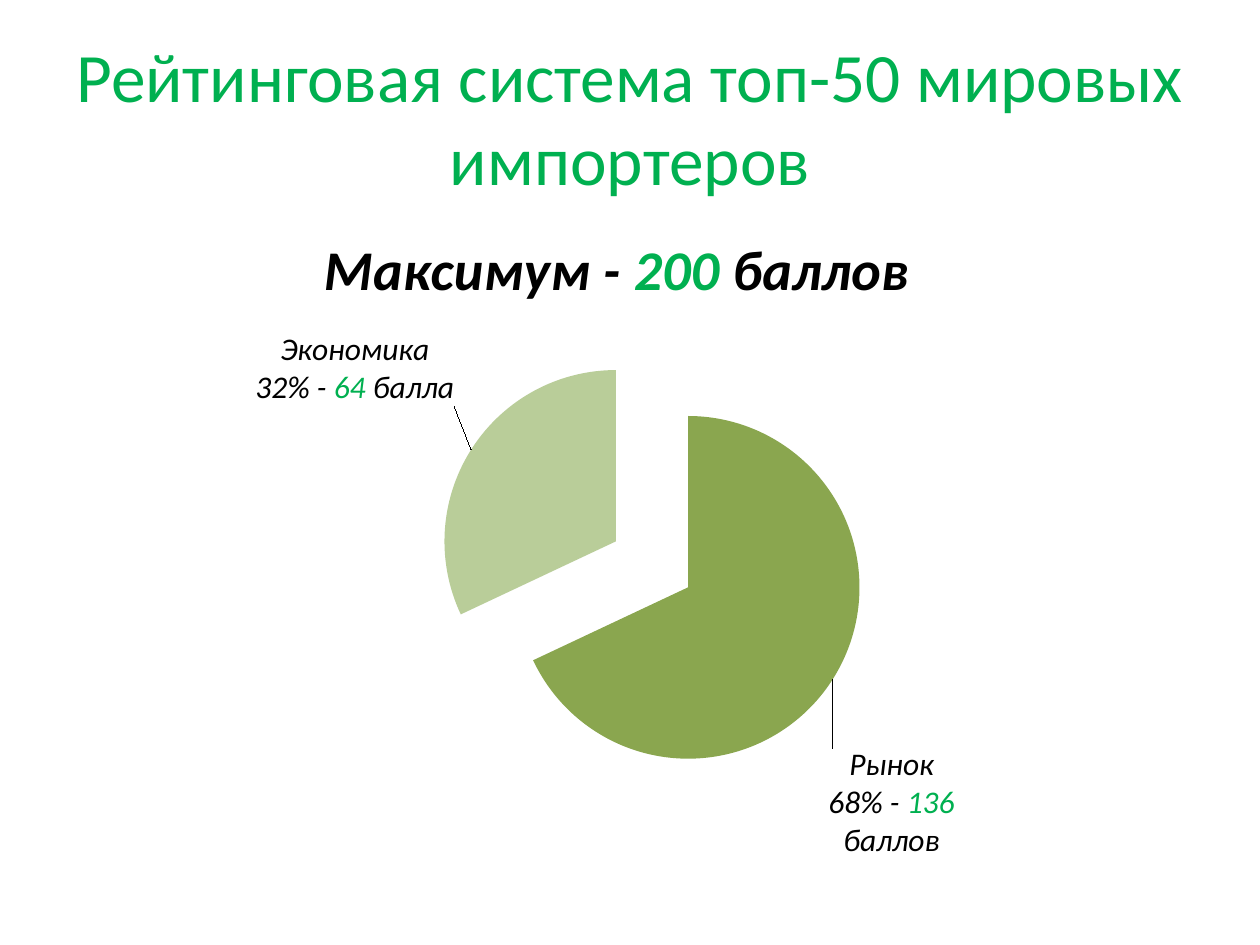
from lxml import etree
from pptx import Presentation
from pptx.chart.data import CategoryChartData
from pptx.dml.color import RGBColor
from pptx.enum.chart import XL_CHART_TYPE, XL_LABEL_POSITION
from pptx.enum.text import MSO_ANCHOR, PP_ALIGN
from pptx.oxml.ns import qn
from pptx.util import Pt

PIE = XL_CHART_TYPE.PIE
OUTSIDE = XL_LABEL_POSITION.OUTSIDE_END
CENTER = PP_ALIGN.CENTER
MIDDLE = MSO_ANCHOR.MIDDLE

FONT = "Calibri"
COLORS = {"accent": "00B050", "text": "000000", "market": "8AA64F", "economy": "B9CD99"}
TITLE_ONLY = 5


def sub(parent, tag, val):
    return etree.SubElement(parent, qn(f"c:{tag}"), val=str(val))


def manual_layout(**values):
    """Return a c:layout whose values are fractions of the chart's size."""
    layout = etree.Element(qn("c:layout"))
    manual = etree.SubElement(layout, qn("c:manualLayout"))
    for tag, val in values.items():
        sub(manual, tag, val)
    return layout


class SlideBuilder:
    def __init__(self, prs):
        self.slide = prs.slides.add_slide(prs.slide_layouts[TITLE_ONLY])

    def style(self, font, size, color="text", **flags):
        font.name, font.size = FONT, Pt(size)
        font.color.rgb = RGBColor.from_string(COLORS[color])
        for name, value in flags.items():
            setattr(font, name, value)

    def title(self, text, left, top, width, height):
        sp = self.slide.shapes.title
        sp.left, sp.top, sp.width, sp.height = map(Pt, (left, top, width, height))
        tf = sp.text_frame
        tf.text, tf.vertical_anchor = text, MIDDLE
        tf.paragraphs[0].alignment = CENTER
        self.style(tf.paragraphs[0].font, 39.6)

        self.style(tf.paragraphs[0].runs[0].font, 39.6, "accent")

    def rich_text(self, tf, lines, size, **flags):
        """Fill tf with lines of (text, color) runs."""
        for i, runs in enumerate(lines):
            p = tf.add_paragraph() if i else tf.paragraphs[0]
            p.alignment = CENTER
            for text, color in runs:
                r = p.add_run()
                r.text = text
                self.style(r.font, size, color, **flags)

    def pie(self, slices, heading, left, top, width, height):
        """Draw an exploded pie of (category, value, color, label lines, label shift) slices."""
        data = CategoryChartData(number_format="0")
        data.categories = [s[0] for s in slices]
        data.add_series("Series 1", [s[1] for s in slices])
        box = map(Pt, (left, top, width, height))
        chart = self.slide.shapes.add_chart(PIE, *box, data).chart
        self.style(chart.font, 18)
        chart.has_legend = False
        self.rich_text(chart.chart_title.text_frame, [heading], 32, bold=True, italic=True)
        chart.chart_title.include_in_layout = False
        title = chart.chart_title._element
        for old in title.findall(qn("c:layout")):
            title.remove(old)
        title.find(qn("c:tx")).addnext(
            manual_layout(xMode="edge", yMode="edge", x=0.22, y=0.04))

        area = chart.plots[0]._element.getparent()
        for old in area.findall(qn("c:layout")):
            area.remove(old)
        area.insert(0, manual_layout(layoutTarget="inner", xMode="edge", yMode="edge",
                                     x=0.33, y=0.22, w=0.4, h=0.66))

        plot = chart.plots[0]
        plot.vary_by_categories = True
        series = plot.series[0]
        labels = series.data_labels
        labels.show_percentage = labels.show_category_name = True
        labels.show_value = False
        labels.number_format, labels.number_format_is_linked = "0%", False
        labels.position = OUTSIDE
        for i, (_, _, color, lines, (dx, dy)) in enumerate(slices):
            point = series.points[i]
            point.format.fill.solid()
            point.format.fill.fore_color.rgb = RGBColor.from_string(COLORS[color])
            label = point.data_label
            self.rich_text(label.text_frame, lines, 18, italic=True)
            label.position = OUTSIDE
            d_lbl = labels._element.findall(qn("c:dLbl"))[i]
            d_lbl.find(qn("c:idx")).addnext(manual_layout(x=dx, y=dy))

        leader = labels._element.find(qn("c:showLeaderLines"))
        if leader is None:
            leader = sub(labels._element, "showLeaderLines", 1)
        leader.set("val", "1")
        explosion = etree.Element(qn("c:explosion"), val="25")
        series._element.find(qn("c:dPt")).addprevious(explosion)


def main():
    prs = Presentation()
    prs.slide_width, prs.slide_height = Pt(720), Pt(540)
    s = SlideBuilder(prs)
    s.title("Рейтинговая система топ-50 мировых импортеров", 36, 21.6, 648, 90)
    market = [[("Рынок", "text")],
              [("68% - ", "text"), ("136", "accent"), (" баллов", "text")]]
    economy = [[("Экономика", "text")],
               [("32% - ", "text"), ("64", "accent"), (" балла", "text")]]
    heading = [("Максимум - ", "text"), ("200", "accent"), (" баллов", "text")]
    s.pie([("Market", 68, "market", market, (-0.01, 0.1)),
           ("Economy", 32, "economy", economy, (-0.01, -0.06))],
          heading, 48.24, 116.64, 612, 374.4)
    prs.save("out.pptx")


if __name__ == "__main__":
    main()
